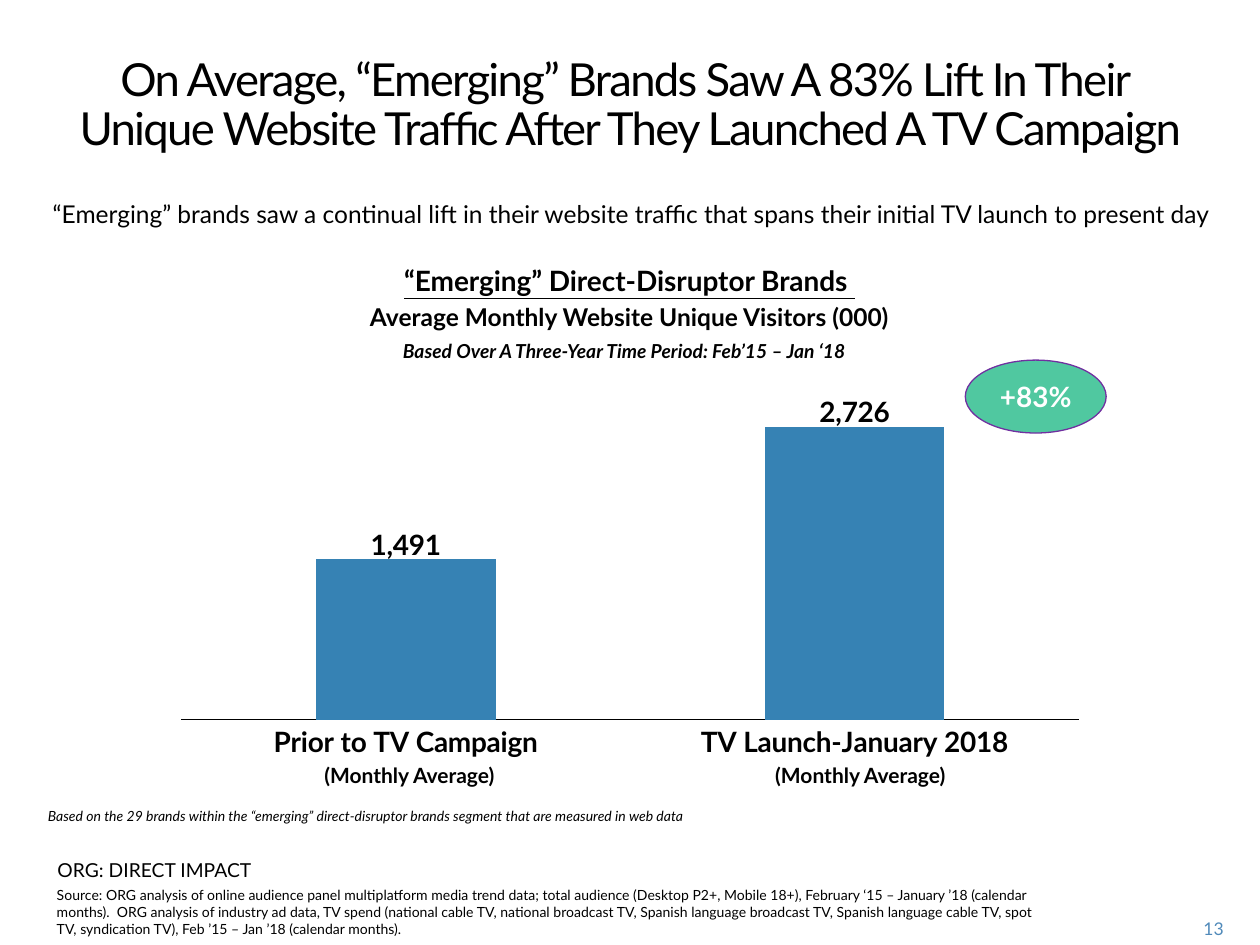
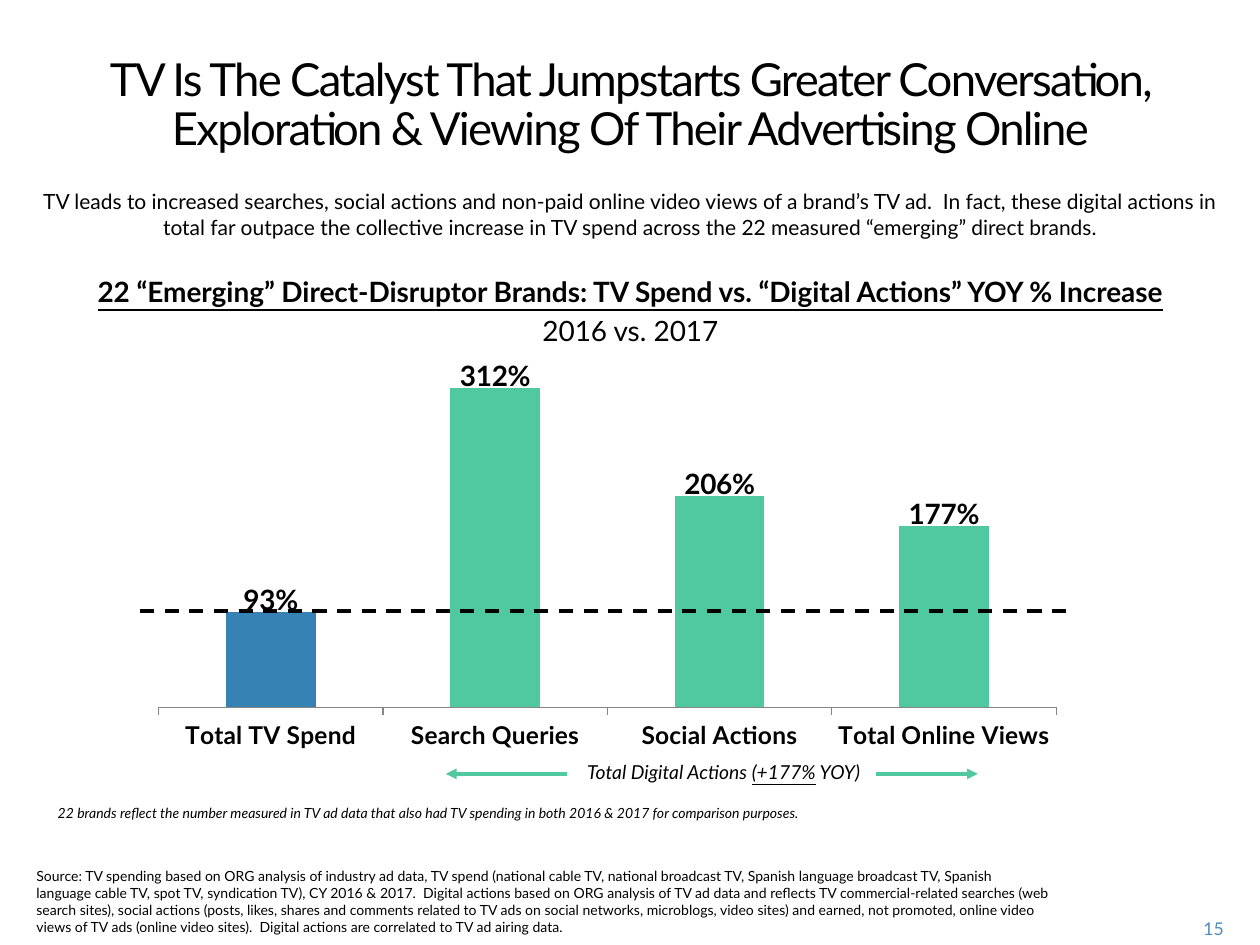
"""Build two slides on the web effects of television campaigns."""
from dataclasses import dataclass

from lxml.etree import SubElement
from pptx import Presentation
from pptx.chart.data import CategoryChartData
from pptx.dml.color import RGBColor
from pptx.enum.chart import XL_CHART_TYPE as ChartType
from pptx.enum.chart import XL_LABEL_POSITION as LabelPosition
from pptx.enum.chart import XL_TICK_MARK as TickMark
from pptx.enum.dml import MSO_LINE_DASH_STYLE as Dash
from pptx.enum.shapes import MSO_CONNECTOR as Connector
from pptx.enum.shapes import MSO_SHAPE as Preset
from pptx.enum.text import MSO_ANCHOR as Anchor
from pptx.enum.text import MSO_AUTO_SIZE as AutoSize
from pptx.enum.text import PP_ALIGN as Align
from pptx.oxml import parse_xml
from pptx.oxml.ns import nsdecls, qn
from pptx.util import Cm, Pt


@dataclass(frozen=True)
class Theme:
    font: str = "Lato"
    ink: str = "000000"
    paper: str = "FFFFFF"
    blue: str = "3682B4"
    green: str = "50C8A0"
    purple: str = "7030A0"
    folio: str = "508ABA"
    axis: str = "868686"
    title: int = 26
    title_leading: int = 28
    heading: int = 16
    lead: int = 14
    body: int = 12
    label: int = 11
    number: int = 10
    small: int = 8


THEME = Theme()
COMPARISON_LAYOUT = 4


@dataclass(frozen=True)
class Area:
    left: float
    top: float
    width: float
    height: float

    def lengths(self) -> tuple:
        return Cm(self.left), Cm(self.top), Cm(self.width), Cm(self.height)


TITLE_AREA = Area(0.48, 1.02, 24.46, 1.65)
NUMBER_AREA = Area(23.37, 18.39, 1.55, 0.64)


@dataclass(frozen=True)
class Passage:
    text: str
    area: Area
    size: int


@dataclass(frozen=True)
class PageText:
    number: int
    title: str
    summary: Passage
    heading: Passage
    subheading: str
    subheading_size: int
    subheading_bold: bool
    source: Passage
    note: Passage


@dataclass(frozen=True)
class ColumnChart:
    area: Area
    values: dict[str, float]
    colors: tuple[str, ...]
    number_format: str
    top_value: float
    plot_height: float
    text_size: int
    category_size: int
    axis_color: str
    tick: TickMark


TRAFFIC_TEXT = PageText(
    number=13,
    title="On Average, “Emerging” Brands Saw A 83% Lift In Their \n"
          "Unique Website Traffic After They Launched A TV Campaign",
    summary=Passage(
        "“Emerging” brands saw a continual lift in their website traffic that spans "
        "their initial TV launch to present day", Area(0.15, 3.89, 25.17, 1.65), THEME.lead),
    heading=Passage("“Emerging” Direct-Disruptor Brands ",
                    Area(3.51, 5.18, 18.36, 1.65), THEME.heading),
    subheading="Average Monthly Website Unique Visitors (000)",
    subheading_size=THEME.lead,
    subheading_bold=True,
    source=Passage(
        "Source: ORG analysis of online audience panel multiplatform media trend data; total "
        "audience (Desktop P2+, Mobile 18+), February ‘15 – January ’18 (calendar months).  "
        "ORG analysis of industry ad data, TV spend (national cable TV, national broadcast "
        "TV, Spanish language broadcast TV, Spanish language cable TV, spot TV, syndication TV), "
        "Feb ’15 – Jan ’18 (calendar months).", Area(0.89, 17.75, 20.4, 0.84), THEME.small),
    note=Passage(
        "Based on the 29 brands within the “emerging” direct-disruptor brands segment that are "
        "measured in web data", Area(0.71, 16.15, 15.09, 0.58), THEME.small),
)

ACTIONS_TEXT = PageText(
    number=15,
    title="TV Is The Catalyst That Jumpstarts Greater Conversation, "
          "Exploration & Viewing Of Their Advertising Online",
    summary=Passage(
        "TV leads to increased searches, social actions and non-paid online video views of a "
        "brand’s TV ad.  In fact, these digital actions in total far outpace the collective "
        "increase in TV spend across the 22 measured “emerging” direct brands.",
        Area(0.48, 3.68, 24.46, 1.65), THEME.body),
    heading=Passage(
        "22 “Emerging” Direct-Disruptor Brands: TV Spend vs. “Digital Actions” YOY % Increase",
        Area(0.48, 5.41, 24.46, 1.65), THEME.heading),
    subheading="2016 vs. 2017",
    subheading_size=THEME.heading,
    subheading_bold=False,
    source=Passage(
        "Source: TV spending based on ORG analysis of industry ad data, TV spend (national "
        "cable TV, national broadcast TV, Spanish language broadcast TV, Spanish language cable "
        "TV, spot TV, syndication TV), CY 2016 & 2017.  Digital actions based on ORG analysis of "
        "TV ad data and reflects TV commercial-related searches (web search sites), social "
        "actions (posts, likes, shares and comments related to TV ads on social networks, "
        "microblogs, video sites) and earned, not promoted, online video views of TV ads (online "
        "video sites).  Digital actions are correlated to TV ad airing data.",
        Area(0.48, 17.37, 20.96, 1.68), THEME.small),
    note=Passage(
        "22 brands reflect the number measured in TV ad data that also had TV spending in both "
        "2016 & 2017 for comparison purposes.", Area(0.91, 16.1, 20.96, 0.58), THEME.small),
)

TRAFFIC_CHART = ColumnChart(
    area=Area(3.28, 5.64, 18.85, 9.86),
    values={"Prior to TV Campaign": 1491, "TV Launch-January 2018": 2726},
    colors=(THEME.blue, THEME.blue),
    number_format="#,##0", top_value=4000, plot_height=0.88,
    text_size=THEME.number, category_size=THEME.heading,
    axis_color=THEME.ink, tick=TickMark.NONE,
)

ACTIONS_CHART = ColumnChart(
    area=Area(2.82, 6.86, 18.85, 8.41),
    values={"Total TV Spend": 0.93, "Search Queries": 3.12,
            "Social Actions": 2.06, "Total Online Views": 1.77},
    colors=(THEME.blue, THEME.green, THEME.green, THEME.green),
    number_format="0%", top_value=3.5, plot_height=0.86,
    text_size=THEME.label, category_size=THEME.lead,
    axis_color=THEME.axis, tick=TickMark.OUTSIDE,
)


def rgb(color: str) -> RGBColor:
    return RGBColor.from_string(color)


def style(font, size: int, color: str = THEME.ink, bold: bool = False) -> None:
    font.name, font.size, font.bold = THEME.font, Pt(size), bold
    font.color.rgb = rgb(color)


def write(box, text: str, *, size: int, color: str = THEME.ink, bold: bool = False,
          italic: bool = False, underline: bool = False, align: Align = Align.CENTER,
          tracking: int = 0, leading: int = 0, join: bool = False) -> None:
    frame = box.text_frame
    para = frame.paragraphs[-1]
    if not join:
        started = bool(para.runs)
        para = frame.add_paragraph() if started else para
        if box.is_placeholder:
            props = para._p.get_or_add_pPr()
            props.set("marL", "0")
            props.set("indent", "0")
            SubElement(props, qn("a:buNone"))
        para.alignment = align
        para.space_before = Pt(round(0.2 * size, 1) if started else 0)
        if leading:
            para.line_spacing = Pt(leading)
    for index, line in enumerate(text.split("\n")):
        if index:
            para.add_line_break()
        span = para.add_run()
        span.text = line
        style(span.font, size, color, bold)
        span.font.italic, span.font.underline = italic, underline
        if tracking:
            span.font._element.set("spc", str(tracking * 100))


def set_frame(box, anchor: Anchor = Anchor.TOP) -> None:
    frame = box.text_frame
    frame.word_wrap, frame.auto_size = True, AutoSize.NONE
    frame.vertical_anchor = anchor


def place(box, area: Area):
    box.left, box.top, box.width, box.height = area.lengths()
    set_frame(box)
    return box


def add_box(page, area: Area):
    box = page.shapes.add_textbox(*area.lengths())
    set_frame(box)
    return box


def add_page(deck, content: PageText):
    page = deck.slides.add_slide(deck.slide_layouts[COMPARISON_LAYOUT])
    title, summary, heading, source, note = page.placeholders
    write(place(title, TITLE_AREA), content.title, size=THEME.title,
          tracking=-1, leading=THEME.title_leading)
    write(place(summary, content.summary.area), content.summary.text, size=content.summary.size)
    write(place(heading, content.heading.area), content.heading.text,
          size=content.heading.size, bold=True, underline=True)
    write(heading, content.subheading, size=content.subheading_size,
          bold=content.subheading_bold)
    write(place(source, content.source.area), content.source.text,
          size=content.source.size, align=Align.LEFT)
    write(place(note, content.note.area), content.note.text,
          size=content.note.size, italic=True, align=Align.LEFT)
    write(add_box(page, NUMBER_AREA), str(content.number), size=THEME.number,
          color=THEME.folio, align=Align.RIGHT)
    return page


def manual_layout(settings: dict[str, object]):
    children = "".join(f'<c:{name} val="{value}"/>' for name, value in settings.items())
    return parse_xml(f'<c:layout {nsdecls("c")}><c:manualLayout>{children}'
                     '</c:manualLayout></c:layout>')


def add_columns(page, columns: ColumnChart) -> None:
    data = CategoryChartData(number_format=columns.number_format)
    data.categories = list(columns.values)
    data.add_series("Series 1", list(columns.values.values()))
    chart = page.shapes.add_chart(ChartType.COLUMN_STACKED, *columns.area.lengths(), data).chart
    chart.has_legend = chart.has_title = False
    style(chart.font, columns.text_size)

    scale = chart.value_axis
    scale.visible = scale.has_major_gridlines = False
    scale.minimum_scale, scale.maximum_scale = 0, columns.top_value
    axis = chart.category_axis
    axis.major_tick_mark, axis.minor_tick_mark = columns.tick, TickMark.NONE
    style(axis.tick_labels.font, columns.category_size, bold=True)
    axis.format.line.color.rgb = rgb(columns.axis_color)
    axis.format.line.width = Pt(0.75)

    plot = chart.plots[0]
    plot.gap_width, plot.overlap, plot.vary_by_categories = 150, 100, False
    series = plot.series[0]
    series.invert_if_negative = False
    series.format.fill.solid()
    series.format.fill.fore_color.rgb = rgb(columns.colors[0])
    labels = series.data_labels
    labels.show_value, labels.number_format_is_linked = True, False
    labels.number_format = columns.number_format
    style(labels.font, THEME.heading, bold=True)

    space = chart._chartSpace
    for flag in space.xpath(".//c:showLeaderLines"):
        flag.set("val", "0")
    for index, (value, color) in enumerate(zip(columns.values.values(), columns.colors)):
        point = series.points[index]
        point.format.fill.solid()
        point.format.fill.fore_color.rgb = rgb(color)
        style(point.data_label.font, THEME.heading, bold=True)
        point.data_label.position = LabelPosition.CENTER
        lift = value / columns.top_value * columns.plot_height / 2 + 0.03
        mark = space.xpath(f".//c:dLbl/c:idx[@val='{index}']")[0]
        mark.addnext(manual_layout({"x": 0, "y": round(-lift, 3)}))

    area = space.xpath(".//c:plotArea")[0]
    for layout in area.findall(qn("c:layout")):
        area.remove(layout)
    area.insert(0, manual_layout({
        "layoutTarget": "inner", "xMode": "edge", "yMode": "edge",
        "x": 0.02, "y": 0.02, "w": 0.96, "h": columns.plot_height}))


def add_line(page, start: float, end: float, height: float, color: str,
             dashed: bool = False, arrow: bool = False) -> None:
    line = page.shapes.add_connector(Connector.STRAIGHT, Cm(start), Cm(height),
                                     Cm(end), Cm(height))
    line.line.color.rgb, line.line.width = rgb(color), Pt(2)
    if dashed:
        line.line.dash_style = Dash.DASH
    if arrow:
        SubElement(line.line._get_or_add_ln(), qn("a:tailEnd"), type="triangle")
    SubElement(line._element.spPr, qn("a:effectLst"))


def add_lift_badge(page) -> None:
    badge = page.shapes.add_shape(Preset.OVAL, *Area(19.46, 7.26, 2.84, 1.47).lengths())
    badge.shadow.inherit = False
    badge.fill.solid()
    badge.fill.fore_color.rgb = rgb(THEME.green)
    badge.line.color.rgb, badge.line.width = rgb(THEME.purple), Pt(0.75)
    set_frame(badge, Anchor.MIDDLE)
    write(badge, "+83%", size=THEME.heading, color=THEME.paper, bold=True)


def build_traffic_page(deck) -> None:
    page = add_page(deck, TRAFFIC_TEXT)
    add_columns(page, TRAFFIC_CHART)
    for left in (4.98, 14.07):
        write(add_box(page, Area(left, 15.24, 6.55, 0.76)), "(Monthly Average)",
              size=THEME.body, bold=True)
    write(add_box(page, Area(6.55, 6.71, 12.07, 0.74)),
          "Based Over A Three-Year Time Period: Feb’15 – Jan ‘18",
          size=THEME.label, bold=True, italic=True)
    add_lift_badge(page)
    write(add_box(page, Area(0.91, 17.17, 7.24, 1.19)), "ORG: DIRECT IMPACT",
          size=THEME.label, align=Align.LEFT)


def build_actions_page(deck) -> None:
    page = add_page(deck, ACTIONS_TEXT)
    add_columns(page, ACTIONS_CHART)
    total = add_box(page, Area(9.09, 15.21, 11, 0.79))
    write(total, "Total Digital Actions ", size=THEME.label, italic=True)
    write(total, "(+177%", size=THEME.label, italic=True, underline=True, join=True)
    write(total, " YOY)", size=THEME.label, italic=True, join=True)
    for start, end in ((17.65, 19.71), (11.43, 8.99)):
        add_line(page, start, end, 15.6, THEME.green, arrow=True)
    add_line(page, 2.82, 21.67, 12.32, THEME.ink, dashed=True)


def main() -> None:
    deck = Presentation()
    deck.slide_width, deck.slide_height = Cm(25.4), Cm(19.05)
    build_traffic_page(deck)
    build_actions_page(deck)
    deck.save("out.pptx")


if __name__ == "__main__":
    main()
